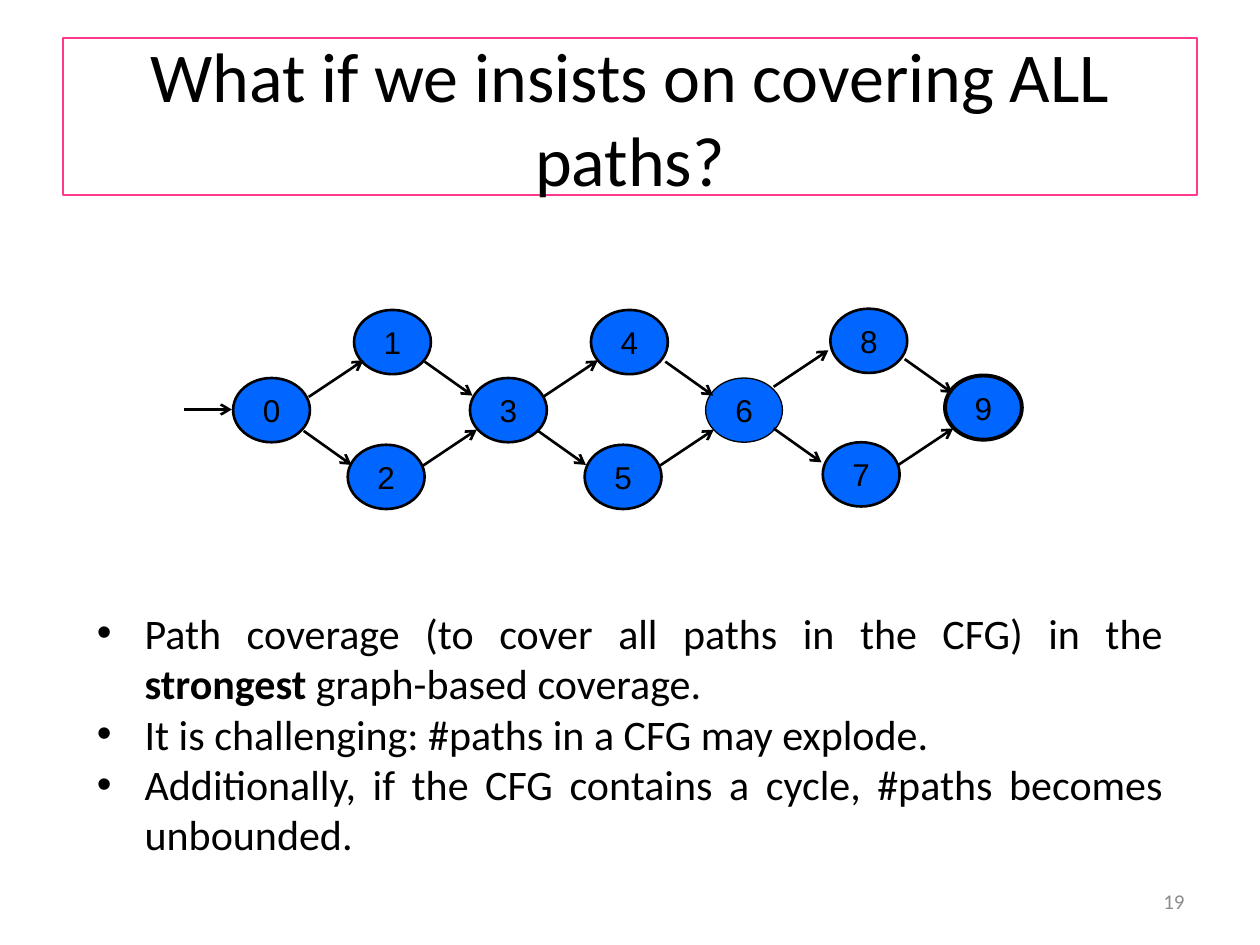
from lxml import etree
from pptx import Presentation, util as u
from pptx.dml.color import RGBColor
from pptx.enum import shapes, text
from pptx.oxml.ns import qn

COLUMNS, ROWS = 100, 75
RISE, FALL = (4.35, -2.9), (3.8, 2.7)
NODES = [
    ("0", 18.5, 30, 1.5), ("1", 28.1, 24.6, 1.5), ("2", 27.6, 35.3, 1.5),
    ("3", 37.3, 30, 1.5), ("4", 46.9, 24.6, 1.5), ("5", 46.4, 35.3, 1.5),
    ("6", 56, 30, 0.75), ("8", 65.9, 24.5, 1.5), ("7", 65.3, 35.1, 1.5),
    ("9", 75, 29.8, 2.25),
]
EDGES = [
    (RISE, [(24.5, 31.5), (33.5, 37), (43.1, 31.5), (52.3, 37), (61.4, 30.7), (71.3, 36.9)]),
    (FALL, [(24.1, 34.2), (33.7, 28.7), (42.7, 34.2), (52.8, 28.7), (61.4, 34), (71.8, 28.5)]),
    ((3.8, 0), [(14.6, 32.5)]),
]
POINTS = [
    [("Path coverage (to cover all paths in the CFG) in the ", False),
     ("strongest", True), (" graph-based coverage.", False)],
    [("It is challenging: #paths in a CFG may explode.", False)],
    [("Additionally, if the CFG contains a cycle, #paths becomes unbounded.", False)],
]


def colour(value):
    """Turn a hex string into a colour."""
    return RGBColor.from_string(value)


class Page:
    """Hold the style and the current slide, and place elements on its grid."""

    ink, node_fill, frame, muted = "000000", "0066FF", "FF388C", "8C8C8C"
    body_font, node_font = "Calibri", "Arial"

    def __init__(self, deck):
        """Add a title-only slide to the deck."""
        self.slide = deck.slides.add_slide(deck.slide_layouts[5])
        self.column = deck.slide_width / COLUMNS
        self.row = deck.slide_height / ROWS

    def spot(self, *lengths):
        """Convert alternating columns and rows to lengths."""
        return [u.Emu(round(length * (self.row if i % 2 else self.column)))
                for i, length in enumerate(lengths)]

    def style(self, para, size, align, font=body_font, ink=ink):
        """Set the font and alignment of a paragraph."""
        para.alignment = align
        para.font.size = u.Pt(size)
        para.font.name = font
        para.font.color.rgb = colour(ink)

    def title(self, words, *place):
        """Fill and frame the title placeholder."""
        box = self.slide.shapes.title
        box.left, box.top, box.width, box.height = self.spot(*place)
        box.line.color.rgb = colour(self.frame)
        box.line.width = u.Pt(1)
        box.text_frame.text = words
        box.text_frame.vertical_anchor = text.MSO_ANCHOR.MIDDLE
        self.style(box.text_frame.paragraphs[0], 40, text.PP_ALIGN.CENTER)

    def node(self, label, left, top, weight):
        """Draw a numbered ellipse."""
        oval = self.slide.shapes.add_shape(
            shapes.MSO_SHAPE.OVAL, *self.spot(left, top, 6.1, 5.1))
        oval.shadow.inherit = False
        oval.fill.solid()
        oval.fill.fore_color.rgb = colour(self.node_fill)
        oval.line.color.rgb = colour(self.ink)
        oval.line.width = u.Pt(weight)
        frame = oval.text_frame
        frame.margin_left = frame.margin_right = frame.margin_top = frame.margin_bottom = 0
        frame.vertical_anchor = text.MSO_ANCHOR.MIDDLE
        frame.text = label
        self.style(frame.paragraphs[0], 18, text.PP_ALIGN.CENTER, self.node_font)

    def arrow(self, start, step):
        """Draw an open arrow from a start point along a step."""
        end = start[0] + step[0], start[1] + step[1]
        line = self.slide.shapes.add_connector(
            shapes.MSO_CONNECTOR.STRAIGHT, *self.spot(*start, *end))
        line.line.color.rgb = colour(self.ink)
        line.line.width = u.Pt(1.5)
        etree.SubElement(line.line._get_or_add_ln(), qn("a:tailEnd"), type="arrow")
        etree.SubElement(line._element.spPr, qn("a:effectLst"))

    def text_frame(self, *place):
        """Add a wrapping text box and return its frame."""
        frame = self.slide.shapes.add_textbox(*self.spot(*place)).text_frame
        frame.word_wrap = True
        return frame

    def bullets(self, points, *place):
        """Write a justified bulleted list."""
        frame = self.text_frame(*place)
        for i, point in enumerate(points):
            para = frame.add_paragraph() if i else frame.paragraphs[0]
            layout = para._p.get_or_add_pPr()
            layout.set("marL", str(u.Inches(0.38)))
            layout.set("indent", str(-u.Inches(0.38)))
            etree.SubElement(layout, qn("a:buFont"), typeface="Arial")
            etree.SubElement(layout, qn("a:buChar"), char="•")
            self.style(para, 24, text.PP_ALIGN.JUSTIFY)
            for words, bold in point:
                span = para.add_run()
                span.text = words
                if bold:
                    span.font.bold = True

    def number(self, label, *place):
        """Write the page number."""
        frame = self.text_frame(*place)
        frame.vertical_anchor = text.MSO_ANCHOR.MIDDLE
        frame.text = label
        self.style(frame.paragraphs[0], 12, text.PP_ALIGN.RIGHT, ink=self.muted)


def main():
    """Build and save the deck."""
    deck = Presentation()
    deck.slide_width, deck.slide_height = u.Inches(10), u.Inches(7.5)
    page = Page(deck)
    page.title("What if we insists on covering ALL paths?", 5, 3, 90, 12.5)
    for node in NODES:
        page.node(*node)
    for step, starts in EDGES:
        for start in starts:
            page.arrow(start, step)
    page.bullets(POINTS, 6.7, 47.7, 86.6, 21.2)
    page.number("19", 71.7, 69.5, 23.3, 4)
    deck.save("out.pptx")


if __name__ == "__main__":
    main()
